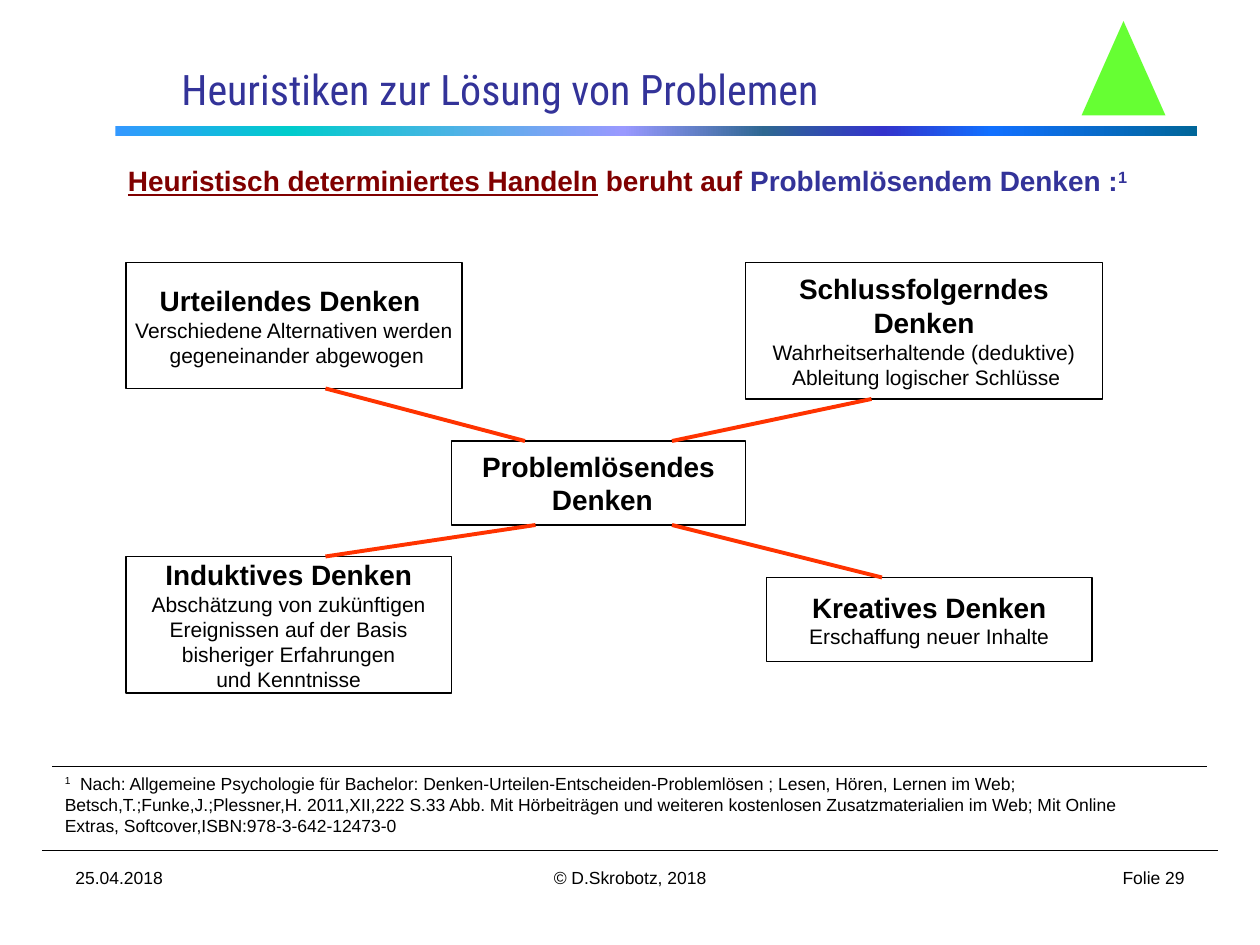
from dataclasses import dataclass

import lxml.etree
import pptx
import pptx.dml.color
import pptx.enum.shapes
import pptx.enum.text
import pptx.oxml
import pptx.oxml.ns
import pptx.util

Pt = pptx.util.Pt
qn = pptx.oxml.ns.qn
Shape = pptx.enum.shapes.MSO_SHAPE
Anchor = pptx.enum.text.MSO_ANCHOR
Align = pptx.enum.text.PP_ALIGN

BLACK, BLUE, MAROON, ORANGE = "000000", "333399", "800000", "FF3300"
BAR_STOPS = [(0, "3399FF"), (16, "00CCCC"), (47, "9999FF"), (60, "2E6792"),
             (71, "3333CC"), (81, "1170FF"), (100, "006699")]


@dataclass
class Span:
    text: str
    size: float = 10
    color: str = BLACK
    bold: bool = False
    underline: bool = False
    superscript: bool = False
    font: str = "Arial"


@dataclass
class Concept:
    left: float
    top: float
    width: float
    height: float
    heading: list[str]
    details: list[str]


@dataclass
class Line:
    start: tuple[float, float]
    end: tuple[float, float]
    color: str = BLACK
    weight: float = 0.75


CONCEPTS = [
    Concept(258, 252, 168, 48, ["Problemlösendes", " Denken"], []),
    Concept(72, 150, 192, 72, ["Urteilendes Denken "],
            ["Verschiedene Alternativen werden", " gegeneinander abgewogen"]),
    Concept(426, 150, 204, 78, ["Schlussfolgerndes", " Denken "],
            ["Wahrheitserhaltende (deduktive)", " Ableitung logischer Schlüsse"]),
    Concept(72, 318, 186, 78, ["Induktives Denken"],
            ["Abschätzung von zukünftigen", "Ereignissen auf der Basis",
             " bisheriger Erfahrungen ", "und Kenntnisse"]),
    Concept(438, 330, 186, 48, ["Kreatives Denken"], ["Erschaffung neuer Inhalte"]),
]

LINES = [
    Line((24, 486), (696, 486)),  # above the footer
    Line((30, 438), (690, 438)),  # above the footnote
    Line((186, 222), (300, 252), ORANGE, 2.25),
    Line((186, 318), (306, 300), ORANGE, 2.25),
    Line((384, 300), (504, 330), ORANGE, 2.25),
    Line((384, 252), (498, 228), ORANGE, 2.25),
]


def rgb(value: str) -> pptx.dml.color.RGBColor:
    return pptx.dml.color.RGBColor.from_string(value)


def write(frame, paragraphs: list[list[Span]], align=Align.LEFT,
          anchor=Anchor.TOP, wrap: bool = True) -> None:
    """Fill a text frame run by run."""
    frame.word_wrap = wrap
    frame.auto_size = pptx.enum.text.MSO_AUTO_SIZE.NONE
    frame.vertical_anchor = anchor
    for index, spans in enumerate(paragraphs):
        para = frame.paragraphs[0] if index == 0 else frame.add_paragraph()
        para.alignment = align
        for item in spans:
            span = para.add_run()
            span.text = item.text
            span.font.name = item.font
            span.font.size = Pt(item.size)
            span.font.bold = item.bold
            span.font.underline = item.underline
            span.font.color.rgb = rgb(item.color)
            if item.superscript:
                span.font._element.set("baseline", "30000")


def add_text(page, left: float, top: float, width: float, height: float,
             spans: list[Span], align=Align.LEFT, wrap: bool = True) -> None:
    box = page.shapes.add_textbox(Pt(left), Pt(top), Pt(width), Pt(height))
    write(box.text_frame, [spans], align, wrap=wrap)


def add_plain_shape(page, kind, left: float, top: float, width: float, height: float):
    shape = page.shapes.add_shape(kind, Pt(left), Pt(top), Pt(width), Pt(height))
    shape.shadow.inherit = False
    shape.fill.background()
    shape.line.fill.background()
    return shape


def add_concept(page, concept: Concept) -> None:
    box = add_plain_shape(page, Shape.RECTANGLE, concept.left, concept.top,
                          concept.width, concept.height)
    box.line.color.rgb = rgb(BLACK)
    box.line.width = Pt(0.75)
    paragraphs = [[Span(text, 16, bold=True)] for text in concept.heading]
    paragraphs += [[Span(text, 12)] for text in concept.details]
    write(box.text_frame, paragraphs, Align.CENTER, Anchor.MIDDLE, wrap=False)


def add_line(page, line: Line) -> None:
    connector = page.shapes.add_connector(
        pptx.enum.shapes.MSO_CONNECTOR.STRAIGHT,
        *(Pt(value) for value in line.start + line.end))
    connector.line.color.rgb = rgb(line.color)
    connector.line.width = Pt(line.weight)
    lxml.etree.SubElement(connector._element.spPr, qn("a:effectLst"))


def add_gradient_bar(page) -> None:
    bar = add_plain_shape(page, Shape.RECTANGLE, 66, 72, 618, 6)
    bar.fill.gradient()
    bar.fill.gradient_angle = 0
    stops = bar._element.spPr.find(".//" + qn("a:gsLst"))
    for stop in list(stops):
        stops.remove(stop)
    for position, color in BAR_STOPS:
        stop = lxml.etree.SubElement(stops, qn("a:gs"), pos=str(position * 1000))
        lxml.etree.SubElement(stop, qn("a:srgbClr"), val=color)


def main() -> None:
    deck = pptx.Presentation()
    deck.slide_width, deck.slide_height = Pt(720), Pt(540)
    page = deck.slides.add_slide(deck.slide_layouts[5])

    # Title, bar and corner emblem
    title = page.shapes.title
    title.left, title.top, title.width, title.height = Pt(96.5), Pt(20), Pt(462), Pt(61)
    write(title.text_frame, [[Span("Heuristiken zur Lösung von Problemen", 24, BLUE,
                                   font="Roboto Condensed")]], anchor=Anchor.MIDDLE)
    add_gradient_bar(page)
    emblem = add_plain_shape(page, Shape.ISOSCELES_TRIANGLE, 618, 12, 48, 54)
    emblem.fill.solid()
    emblem.fill.fore_color.rgb = rgb("66FF33")

    # Lead sentence
    add_text(page, 66, 90, 588, 26.5, [
        Span("Heuristisch determiniertes Handeln", 16, MAROON, True, underline=True),
        Span(" beruht auf ", 16, MAROON, True),
        Span("Problemlösendem Denken :", 16, BLUE, True),
        Span("1", 16, BLUE, True, superscript=True),
    ], wrap=False)

    # Concept map and rules
    for concept in CONCEPTS:
        add_concept(page, concept)
    for line in LINES:
        add_line(page, line)

    # Footnote
    add_text(page, 30, 438, 648, 43.5, [
        Span("1", superscript=True),
        Span("  Nach: Allgemeine Psychologie für Bachelor: "
             "Denken-Urteilen-Entscheiden-Problemlösen ; Lesen, Hören, Lernen im Web; "
             "Betsch,T.;Funke,J.;Plessner,H. 2011,XII,222 S.33 Abb. Mit Hörbeiträgen und "
             "weiteren kostenlosen Zusatzmaterialien im Web; Mit Online Extras, "
             "Softcover,ISBN:978-3-642-12473-0"),
    ])

    # Footer
    add_text(page, 36, 492, 168, 37.5, [Span("25.04.2018")])
    add_text(page, 246, 492, 228, 37.5, [Span("© D.Skrobotz, 2018")], Align.CENTER)
    add_text(page, 516, 492, 168, 37.5, [Span("Folie 29")], Align.RIGHT)

    deck.save("out.pptx")


if __name__ == "__main__":
    main()
